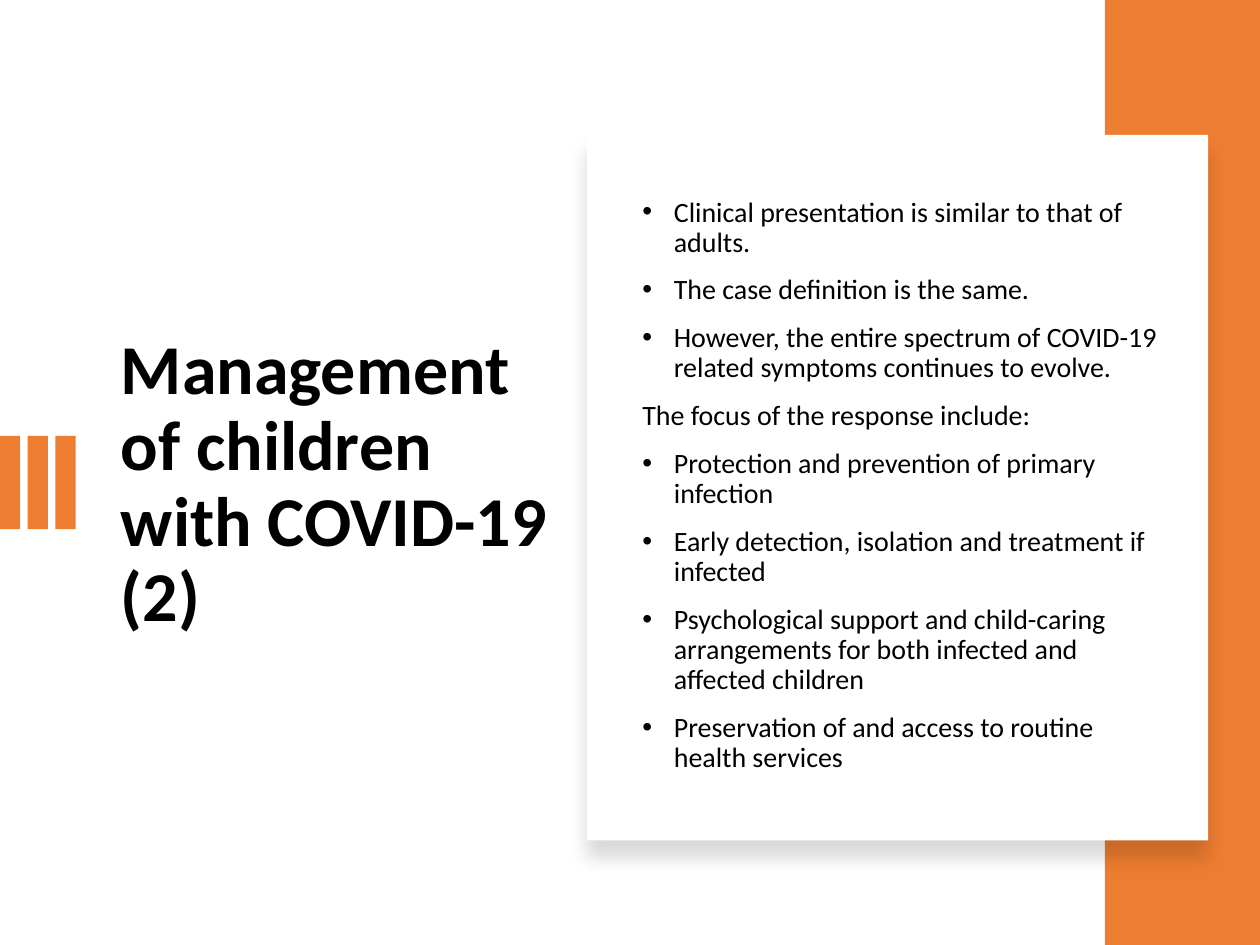
"""Build the slide on managing children with COVID-19."""
from lxml import etree
from pptx import Presentation
from pptx.dml.color import RGBColor
from pptx.enum.shapes import MSO_SHAPE
from pptx.enum.text import MSO_ANCHOR, MSO_AUTO_SIZE, PP_ALIGN
from pptx.oxml import parse_xml
from pptx.oxml.ns import nsdecls, qn
from pptx.util import Inches, Pt

RECTANGLE = MSO_SHAPE.RECTANGLE
MIDDLE = MSO_ANCHOR.MIDDLE
NO_AUTOFIT = MSO_AUTO_SIZE.NONE
LEFT = PP_ALIGN.LEFT
ORANGE, WHITE, BLACK = "ED7D31", "FFFFFF", "000000"
TITLE_ONLY = 5


def add_rectangle(shapes, left, top, width, height, color):
    shape = shapes.add_shape(RECTANGLE, Inches(left), Inches(top), Inches(width), Inches(height))
    shape.fill.solid()
    shape.fill.fore_color.rgb = RGBColor.from_string(color)
    shape.line.fill.background()
    shape.shadow.inherit = False
    return shape


def write_paragraphs(shape, lines, size, bold, space_before):
    text_frame = shape.text_frame
    text_frame.word_wrap = True
    text_frame.auto_size = NO_AUTOFIT
    text_frame.vertical_anchor = MIDDLE
    text_frame.text = "\n".join(lines)
    for paragraph in text_frame.paragraphs:
        paragraph.alignment = LEFT
        paragraph.line_spacing = 0.9
        paragraph.space_before = Pt(space_before)
        font = paragraph.runs[0].font
        font.name = "Calibri"
        font.size = Pt(size)
        font.bold = bold
        font.color.rgb = RGBColor.from_string(BLACK)


presentation = Presentation()
presentation.slide_width = Inches(10)
presentation.slide_height = Inches(7.5)
slide = presentation.slides.add_slide(presentation.slide_layouts[TITLE_ONLY])

title = slide.shapes.title
title.left, title.top = Inches(0.86), Inches(1.46)
title.width, title.height = Inches(3.81), Inches(4.79)
write_paragraphs(title, ["Management of children with COVID-19 (2)"], 40, True, 0)

bars = slide.shapes.add_group_shape()
for index in range(3):
    add_rectangle(bars.shapes, 0.22 * index, 3.46, 0.16, 0.74, ORANGE)

add_rectangle(slide.shapes, 8.77, 0, 1.23, 7.5, ORANGE)

card = add_rectangle(slide.shapes, 4.66, 1.07, 4.93, 5.6, WHITE)
effects = card.element.spPr.find(qn("a:effectLst"))
effects.append(parse_xml(
    f'<a:outerShdw {nsdecls("a")} blurRad="{Pt(11)}" dist="{Pt(10)}" dir="5400000" '
    f'algn="t" rotWithShape="0"><a:srgbClr val="{BLACK}"><a:alpha val="15000"/>'
    '</a:srgbClr></a:outerShdw>'))

focus_heading = "The focus of the response include:"
body_lines = [
    "Clinical presentation is similar to that of adults.",
    "The case definition is the same.",
    "However, the entire spectrum of COVID-19 related symptoms continues to evolve.",
    focus_heading,
    "Protection and prevention of primary infection",
    "Early detection, isolation and treatment if infected",
    "Psychological support and child-caring arrangements for both infected and affected children",
    "Preservation of and access to routine health services",
]
body = slide.shapes.add_textbox(Inches(5), Inches(1.46), Inches(4.32), Inches(4.79))
write_paragraphs(body, body_lines, 16, False, 10)
for paragraph in body.text_frame.paragraphs:
    if paragraph.text != focus_heading:
        properties = paragraph._p.get_or_add_pPr()
        properties.set("marL", str(Inches(0.25)))
        properties.set("indent", str(-Inches(0.25)))
        etree.SubElement(properties, qn("a:buFont"), typeface="Arial")
        etree.SubElement(properties, qn("a:buChar"), char="•")

presentation.save("out.pptx")
